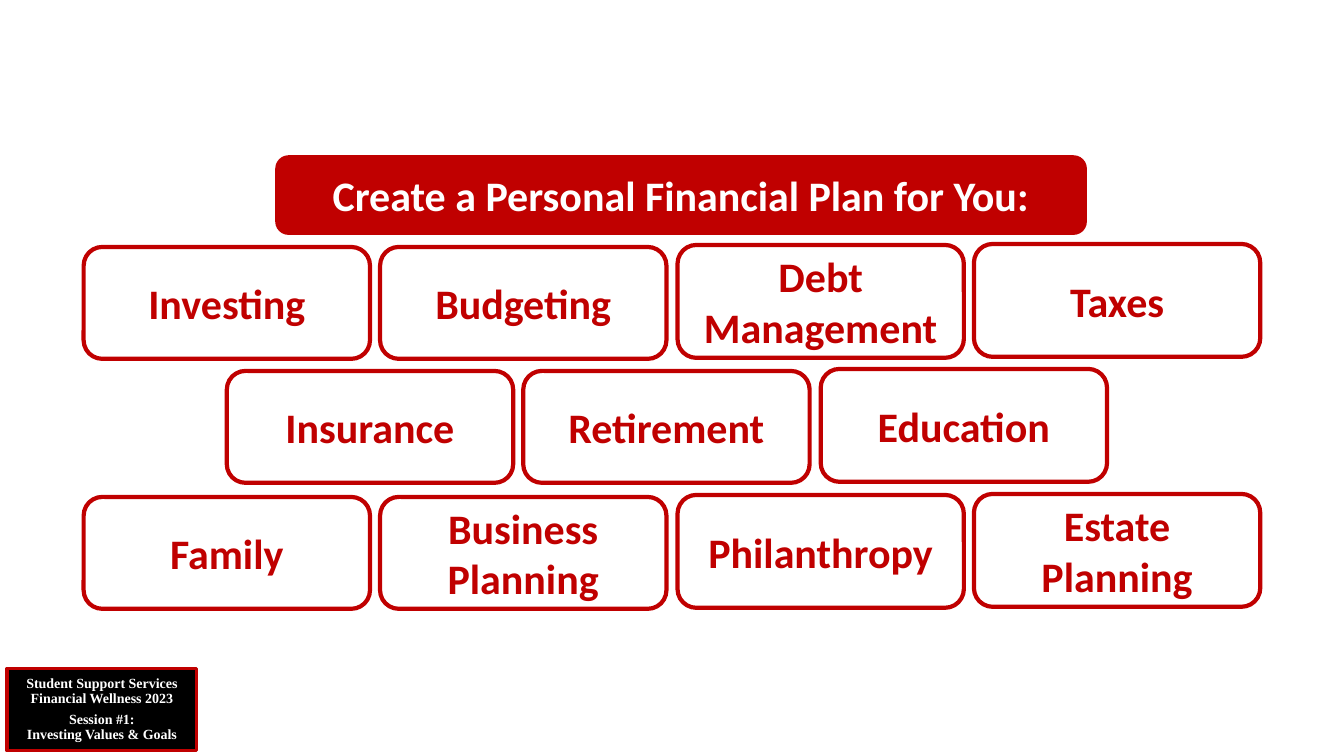
from dataclasses import dataclass

from pptx import Presentation
from pptx import util as u
from pptx.dml import color
from pptx.enum import shapes, text

PX = 9144


@dataclass(frozen=True)
class Theme:
    red: str = "C00000"
    white: str = "FFFFFF"
    black: str = "000000"
    topic_font: str = "Calibri"
    footer_font: str = "Times New Roman"
    topic_size: int = 30
    footer_size: int = 10
    topic_line: float = 3
    footer_line: float = 2.25


class PlanSlide:
    def __init__(self, presentation, theme):
        self.theme = theme
        self.slide = presentation.slides.add_slide(presentation.slide_layouts[6])

    def box(self, kind, bounds, fill, line_width=0):
        shape = self.slide.shapes.add_shape(kind, *(n * PX for n in bounds))
        shape.shadow.inherit = False
        shape.fill.solid()
        shape.fill.fore_color.rgb = color.RGBColor.from_string(fill)
        if line_width:
            shape.line.color.rgb = color.RGBColor.from_string(self.theme.red)
            shape.line.width = u.Pt(line_width)
        else:
            shape.line.fill.background()
        shape.text_frame.word_wrap = True
        shape.text_frame.vertical_anchor = text.MSO_ANCHOR.MIDDLE
        return shape

    def add_words(self, paragraph, words, font, size, ink):
        paragraph.alignment = text.PP_ALIGN.CENTER
        for index, line in enumerate(words.split("\n")):
            if index:
                paragraph.add_line_break()
            run = paragraph.add_run()
            run.text = line
            run.font.name = font
            run.font.size = u.Pt(size)
            run.font.bold = True
            run.font.color.rgb = color.RGBColor.from_string(ink)

    def rounded(self, words, bounds, fill, ink, line_width=0):
        shape = self.box(shapes.MSO_SHAPE.ROUNDED_RECTANGLE, bounds, fill, line_width)
        self.add_words(shape.text_frame.paragraphs[0], words,
                       self.theme.topic_font, self.theme.topic_size, ink)

    def heading(self, words, bounds):
        self.rounded(words, bounds, self.theme.red, self.theme.white)

    def topic(self, words, bounds):
        self.rounded(words, bounds, self.theme.white, self.theme.red, self.theme.topic_line)

    def footer(self, lines, bounds):
        theme = self.theme
        shape = self.box(shapes.MSO_SHAPE.RECTANGLE, bounds, theme.black, theme.footer_line)
        frame = shape.text_frame
        for index, words in enumerate(lines):
            paragraph = frame.add_paragraph() if index else frame.paragraphs[0]
            paragraph.line_spacing = 0.9
            self.add_words(paragraph, words, theme.footer_font, theme.footer_size, theme.white)
        paragraph.space_before = u.Pt(4)


def main():
    presentation = Presentation()
    presentation.slide_width = 1333 * PX
    presentation.slide_height = 750 * PX
    plan = PlanSlide(presentation, Theme())

    plan.footer(
        ["Student Support Services", "Financial Wellness 2023",
         "Session #1:\nInvesting Values & Goals"],
        (7, 663, 188, 82),
    )
    plan.heading("Create a Personal Financial Plan for You:", (273, 154, 805, 79))

    topic_rows = [
        (83, 245, ["Investing", "Budgeting", "Debt Management", "Taxes"]),
        (225, 368, ["Insurance", "Retirement", "Education"]),
        (83, 493, ["Family", "Business Planning", "Philanthropy", "Estate Planning"]),
    ]
    column_lefts = [round(column * 883 / 3) for column in range(4)]
    column_lifts = [0, 0, 2, 3]
    column_heights = [111, 111, 112, 112]
    for left, top, topics in topic_rows:
        for words, offset, lift, height in zip(
                topics, column_lefts, column_lifts, column_heights):
            plan.topic(words, (left + offset, top - lift, 284, height))

    presentation.save("out.pptx")


if __name__ == "__main__":
    main()
